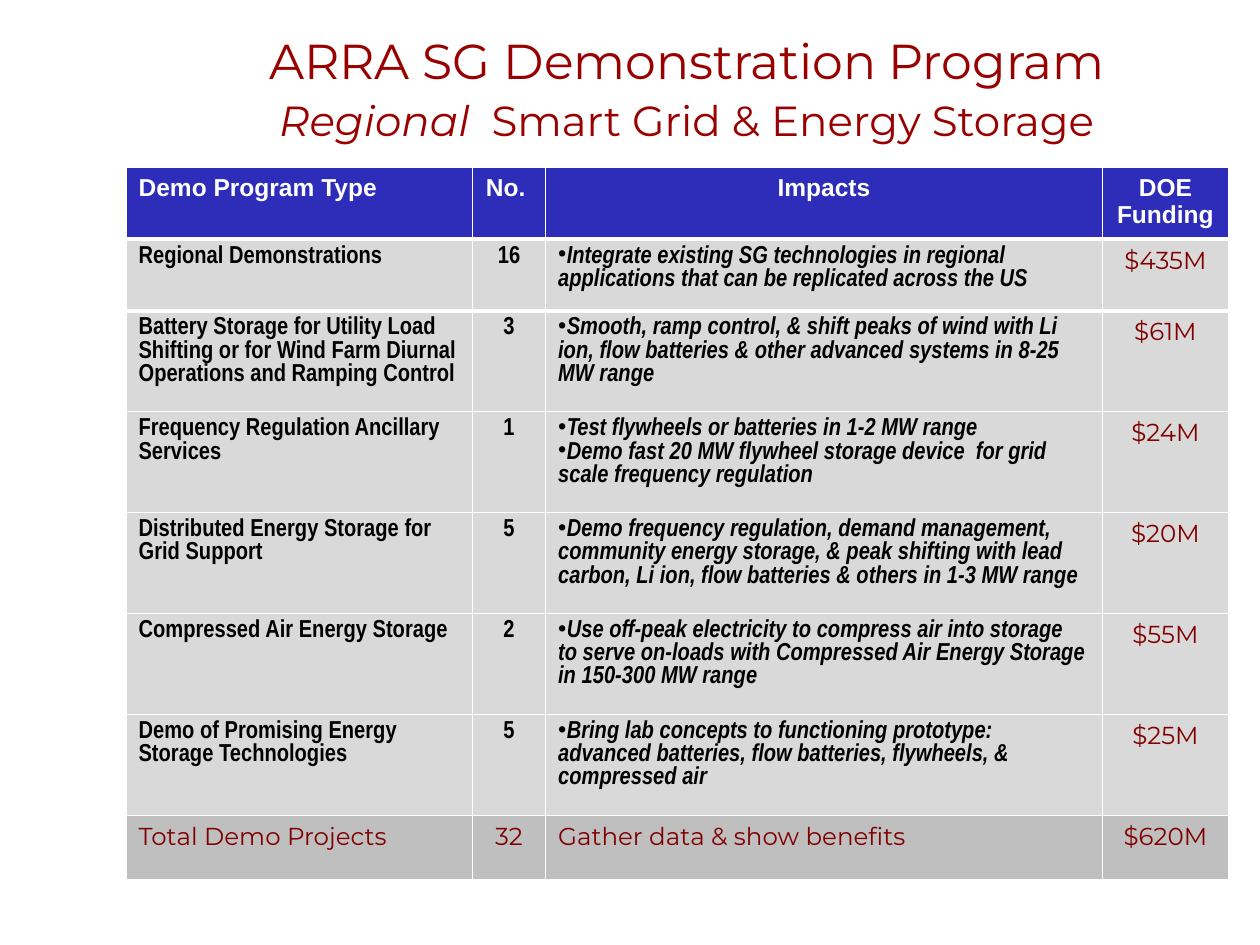
from lxml import etree
from pptx import Presentation
from pptx.dml.color import RGBColor
from pptx.enum.text import MSO_AUTO_SIZE as AUTO, PP_ALIGN as AL
from pptx.oxml.ns import qn
from pptx.util import Inches, Pt

WHITE, BLACK, RED, MAROON = "FFFFFF", "000000", "990000", "800000"
BLUE, LIGHT, GREY = "2D2DB9", "D9D9D9", "BFBFBF"

HEADER = ["Demo Program Type", "No. ", "Impacts", "DOE Funding"]
PROGRAMS = [
    ("Regional Demonstrations", "16",
     ["Integrate existing SG technologies in regional applications that can be "
      "replicated across the US"], "$435M"),
    ("Battery Storage for Utility Load Shifting or for Wind Farm Diurnal "
     "Operations and Ramping Control", "3",
     ["Smooth, ramp control, & shift peaks of wind with Li ion, flow batteries "
      "& other advanced systems in 8-25 MW range"], "$61M"),
    ("Frequency Regulation Ancillary Services", "1",
     ["Test flywheels or batteries in 1-2 MW range",
      "Demo fast 20 MW flywheel storage device  for grid scale frequency "
      "regulation"], "$24M"),
    ("Distributed Energy Storage for Grid Support", "5",
     ["Demo frequency regulation, demand management, community energy storage, "
      "& peak shifting with lead carbon, Li ion, flow batteries & others in "
      "1-3 MW range"], "$20M"),
    ("Compressed Air Energy Storage", "2",
     ["Use off-peak electricity to compress air into storage  to serve on-loads "
      "with Compressed Air Energy Storage in 150-300 MW range"], "$55M"),
    ("Demo of Promising Energy Storage Technologies", "5",
     ["Bring lab concepts to functioning prototype: advanced batteries, flow "
      "batteries, flywheels, & compressed air"], "$25M"),
]
TOTAL = ["Total Demo Projects", "32", "Gather data & show benefits", "$620M"]


def rgb(value):
    return RGBColor.from_string(value)


def add_text(p, text, size=14, font="Montserrat", color=MAROON, bold=False,
             italic=False, align=AL.LEFT, bullet=False):
    p.alignment = align
    if bullet:
        pPr = p._p.get_or_add_pPr()
        pPr.set("marL", "0")
        pPr.set("indent", "0")
        etree.SubElement(pPr, qn("a:buChar")).set("char", "•")
    r = p.add_run()
    r.text = text
    f = r.font
    f.size, f.name, f.bold, f.italic = Pt(size), font, bold, italic
    f.color.rgb = rgb(color)


class Deck:
    HEAD = dict(font="Arial", color=WHITE, bold=True)
    BODY = dict(font="Arial Narrow", color=BLACK, bold=True)
    PLAIN = dict(font="Montserrat", color=MAROON)

    def __init__(self, width, height):
        self.prs = Presentation()
        self.prs.slide_width, self.prs.slide_height = Inches(width), Inches(height)
        self.s = self.prs.slides.add_slide(self.prs.slide_layouts[6])

    def title(self, box, lines):
        tf = self.s.shapes.add_textbox(*map(Inches, box)).text_frame
        tf.word_wrap = True
        tf.auto_size = AUTO.SHAPE_TO_FIT_TEXT
        for i, runs in enumerate(lines):
            p = tf.paragraphs[0] if i == 0 else tf.add_paragraph()
            p.line_spacing = 1.1
            for text, fmt in runs:
                add_text(p, text, color=RED, align=AL.CENTER, **fmt)

    def table(self, box, cols, rows):
        frame = self.s.shapes.add_table(len(rows), len(cols), *map(Inches, box))
        table = frame.table
        for column, width in zip(table.columns, cols):
            column.width = Inches(width)
        for row, height in zip(table.rows, rows):
            row.height = Inches(height)
        return table

    def cell(self, cell, texts, fill, top=1, bottom=1, **fmt):
        cell.fill.solid()
        cell.fill.fore_color.rgb = rgb(fill)
        self.borders(cell, L=1, R=1, T=top, B=bottom)
        tf = cell.text_frame
        for i, text in enumerate(texts):
            p = tf.paragraphs[0] if i == 0 else tf.add_paragraph()
            add_text(p, text, **fmt)

    def borders(self, cell, **widths):
        tcPr = cell._tc.get_or_add_tcPr()
        for i, (side, width) in enumerate(widths.items()):
            ln = etree.Element(qn(f"a:ln{side}"), w=str(Pt(width)))
            fill = etree.SubElement(ln, qn("a:solidFill"))
            etree.SubElement(fill, qn("a:srgbClr")).set("val", WHITE)
            tcPr.insert(i, ln)


def main():
    deck = Deck(10, 7.5)

    # Title
    deck.title((1.15, 0.15, 8.6, 1.05), [
        [("ARRA SG Demonstration Program", dict(size=28))],
        [("Regional  ", dict(size=24, italic=True)),
         ("Smart Grid & Energy Storage", dict(size=24))],
    ])

    # Table grid
    heights = [0.56, 0.57] + [0.8] * 5 + [0.51]
    table = deck.table((1, 1.33, 8.75, sum(heights)), [2.75, 0.58, 4.42, 1], heights)
    last = len(heights) - 1

    # Header and total rows
    for c in range(4):
        deck.cell(table.cell(0, c), [HEADER[c]], BLUE, bottom=3,
                  align=AL.CENTER if c else AL.LEFT, **deck.HEAD)
        deck.cell(table.cell(last, c), [TOTAL[c]], GREY,
                  align=AL.CENTER if c % 2 else AL.LEFT, **deck.PLAIN)

    # Program rows, with thick rules around the first one
    for i, (name, count, impacts, funding) in enumerate(PROGRAMS, 1):
        edges = dict(fill=LIGHT, top=3 if i <= 2 else 1, bottom=3 if i == 1 else 1)
        deck.cell(table.cell(i, 0), [name], **edges, **deck.BODY)
        deck.cell(table.cell(i, 1), [count], align=AL.CENTER, **edges, **deck.BODY)
        deck.cell(table.cell(i, 2), impacts, italic=True, bullet=True,
                  **edges, **deck.BODY)
        deck.cell(table.cell(i, 3), [funding], align=AL.CENTER, **edges, **deck.PLAIN)

    deck.prs.save("out.pptx")


if __name__ == "__main__":
    main()
